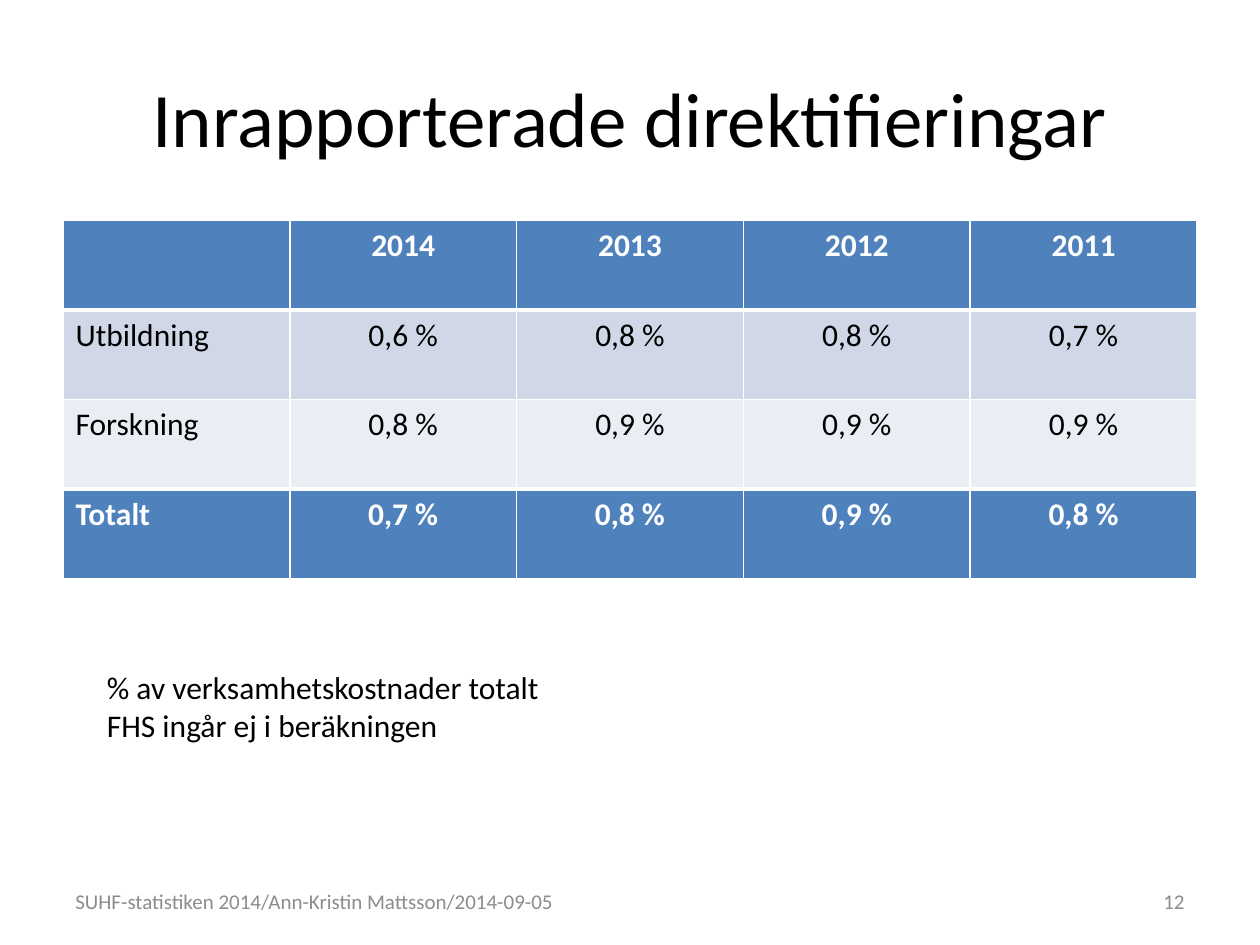
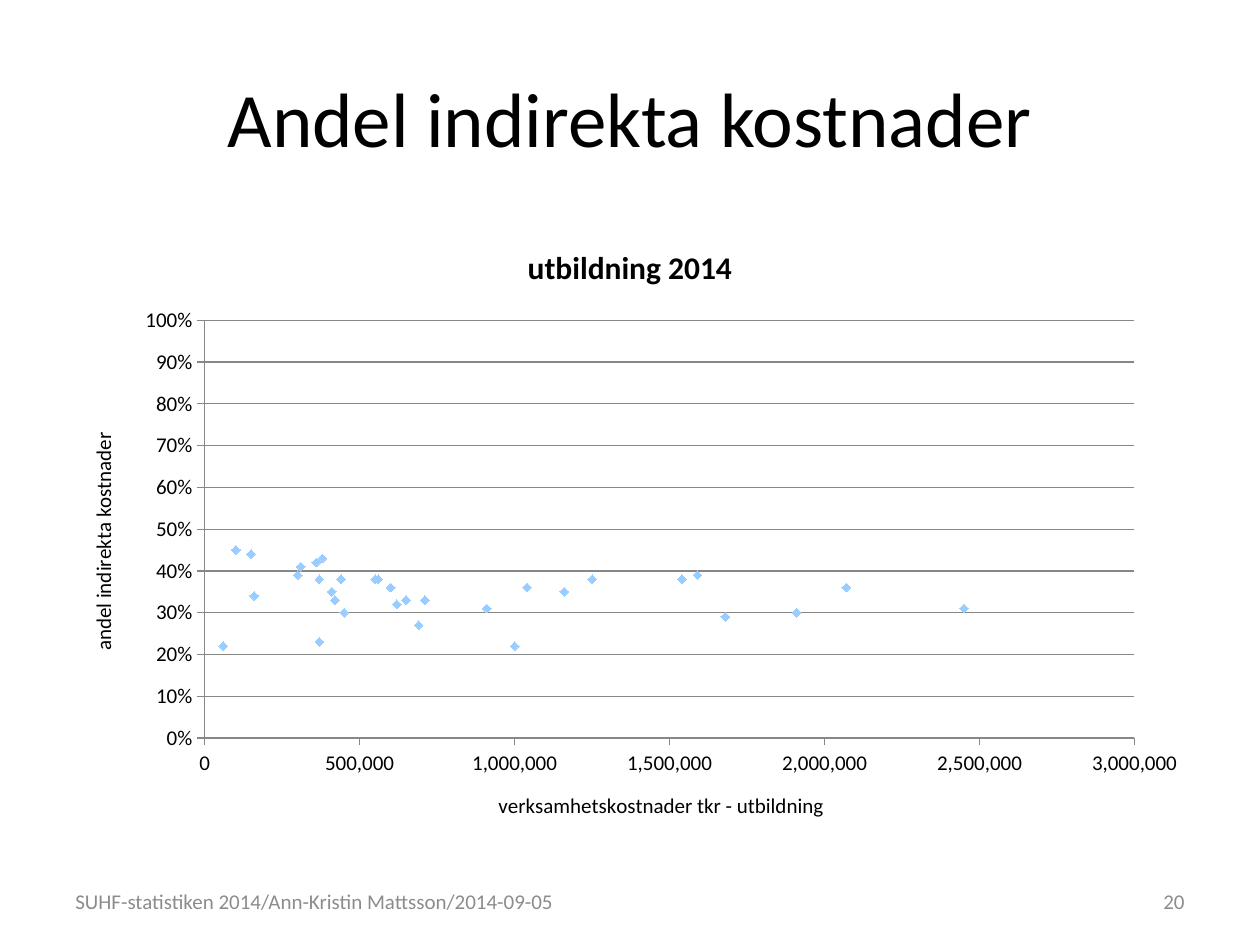
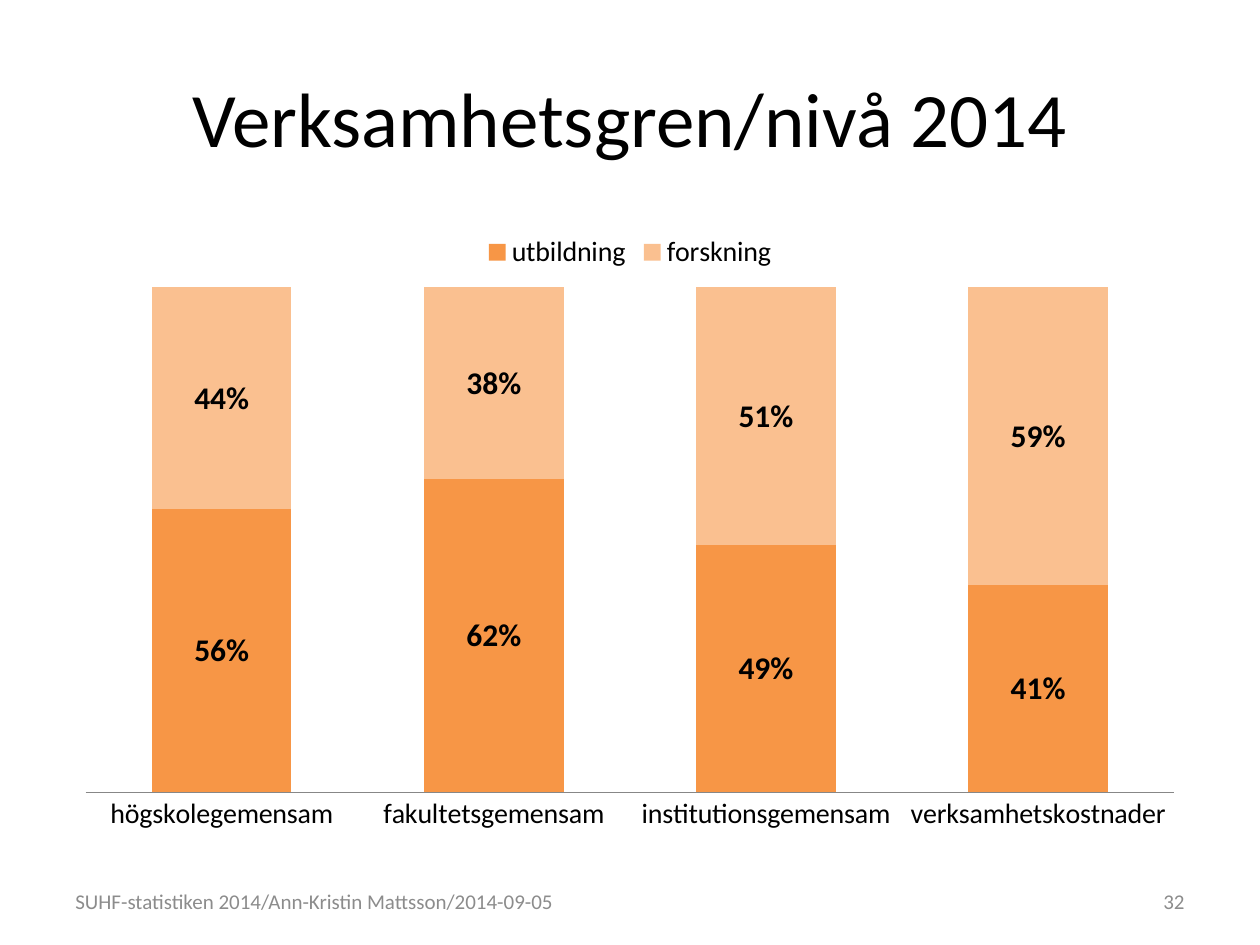
import pptx
import pptx.chart.data
import pptx.dml.color
import pptx.enum.chart
import pptx.enum.text
import pptx.oxml
import pptx.oxml.ns
import pptx.util
from pptx.util import Inches, Pt

FONT = "Calibri"
BLACK, WHITE, GREY, AXIS = "000000", "FFFFFF", "8C8C8C", "878787"
BLUE, BAND_DARK, BAND_LIGHT = "4F81BD", "D0D8E8", "E9EDF4"
MARKER, ORANGE, PEACH = "99CCFF", "F79646", "FAC090"
CONTENT = (0.5, 1.75, 9, 4.95)
FOOTER = "SUHF-statistiken 2014/Ann-Kristin Mattsson/2014-09-05"
ALIGN = pptx.enum.text.PP_ALIGN
ANCHOR = pptx.enum.text.MSO_ANCHOR
CHART = pptx.enum.chart

DIRECT_COSTS = [
    ["", "2014", "2013", "2012", "2011"],
    ["Utbildning", "0,6 %", "0,8 %", "0,8 %", "0,7 %"],
    ["Forskning", "0,8 %", "0,9 %", "0,9 %", "0,9 %"],
    ["Totalt", "0,7 %", "0,8 %", "0,9 %", "0,8 %"],
]

# Education costs in thousands of tkr, and the indirect share in percent
INDIRECT_SHARES = [
    (300, 39), (910, 31), (370, 23), (100, 45), (2070, 36), (440, 38), (420, 33), (380, 43),
    (450, 30), (560, 38), (410, 35), (310, 41), (360, 42), (650, 33), (160, 34), (1000, 22),
    (60, 22), (150, 44), (1250, 38), (1540, 38), (1160, 35), (690, 27), (2450, 31), (1040, 36),
    (600, 36), (550, 38), (370, 38), (620, 32), (1590, 39), (1680, 29), (1910, 30), (710, 33),
]

LEVELS = ["högskolegemensam", "fakultetsgemensam", "institutionsgemensam", "verksamhetskostnader"]
LEVEL_SHARES = [
    ("utbildning", [0.56, 0.62, 0.49, 0.41], ORANGE),
    ("forskning", [0.44, 0.38, 0.51, 0.59], PEACH),
]


def rgb(color):
    return pptx.dml.color.RGBColor.from_string(color)


def style_font(font, size, color=BLACK, bold=False):
    font.name = FONT
    font.size = Pt(size)
    font.bold = bold
    font.color.rgb = rgb(color)


def style_text(frame, size, color=BLACK, bold=False, align=ALIGN.LEFT):
    for paragraph in frame.paragraphs:
        paragraph.alignment = align
        for run in paragraph.runs:
            style_font(run.font, size, color, bold)


def add_text(slide, box, text, size, color=BLACK, align=ALIGN.LEFT, anchor=ANCHOR.TOP):
    frame = slide.shapes.add_textbox(*map(Inches, box)).text_frame
    frame.word_wrap = True
    frame.vertical_anchor = anchor
    frame.text = text
    style_text(frame, size, color, align=align)


def add_slide(deck, heading, number):
    """Add a slide with the shared title, footer and page number."""
    slide = deck.slides.add_slide(deck.slide_layouts[5])
    title = slide.shapes.title
    title.left, title.top, title.width, title.height = map(Inches, (0.5, 0.3, 9, 1.25))
    title.text_frame.text = heading
    title.text_frame.vertical_anchor = ANCHOR.MIDDLE
    style_text(title.text_frame, 44, align=ALIGN.CENTER)
    add_text(slide, (0.5, 6.95, 4.2, 0.4), FOOTER, 12, GREY, anchor=ANCHOR.MIDDLE)
    add_text(slide, (7.17, 6.95, 2.33, 0.4), str(number), 12, GREY, ALIGN.RIGHT, ANCHOR.MIDDLE)
    return slide


def set_borders(cell, top, bottom):
    for side, width in (("L", 1), ("R", 1), ("T", top), ("B", bottom)):
        cell._tc.get_or_add_tcPr().append(pptx.oxml.parse_xml(
            f'<a:ln{side} {pptx.oxml.ns.nsdecls("a")} w="{Pt(width)}"><a:solidFill>'
            f'<a:srgbClr val="{WHITE}"/></a:solidFill></a:ln{side}>'))


def add_cost_table(slide, rows):
    """Draw a table whose first and last rows are emphasised."""
    left, top, width, _ = CONTENT
    last = len(rows) - 1
    table = slide.shapes.add_table(len(rows), len(rows[0]), *map(
        Inches, (left, top, width, 0.71 * len(rows)))).table
    for r, row in enumerate(rows):
        strong = r in (0, last)
        fill = BLUE if strong else (BAND_DARK if r % 2 else BAND_LIGHT)
        for c, text in enumerate(row):
            cell = table.cell(r, c)
            set_borders(cell, 3 if r in (1, last) else 1, 3 if r in (0, last - 1) else 1)
            cell.fill.solid()
            cell.fill.fore_color.rgb = rgb(fill)
            cell.text_frame.text = text
            style_text(cell.text_frame, 18, WHITE if strong else BLACK, strong,
                       ALIGN.CENTER if c else ALIGN.LEFT)


def add_chart(slide, kind, data, plot_area):
    """Add a chart with its inner plot area at fractions x, y, w, h of the frame."""
    chart = slide.shapes.add_chart(kind, *map(Inches, CONTENT), data).chart
    style_font(chart.font, 10)
    chart.plots[0].vary_by_categories = False
    area = chart._chartSpace.chart.plotArea
    for old in area.findall(pptx.oxml.ns.qn("c:layout")):
        area.remove(old)
    places = "".join(f'<c:{key} val="{value}"/>' for key, value in zip("xywh", plot_area))
    area.insert(0, pptx.oxml.parse_xml(
        f'<c:layout {pptx.oxml.ns.nsdecls("c")}><c:manualLayout><c:layoutTarget val="inner"/>'
        f'<c:xMode val="edge"/><c:yMode val="edge"/>{places}</c:manualLayout></c:layout>'))
    return chart


def style_line(line):
    line.color.rgb = rgb(AXIS)
    line.width = Pt(0.75)


def style_axis(axis, size, tick, title=None):
    axis.major_tick_mark = tick
    axis.minor_tick_mark = CHART.XL_TICK_MARK.NONE
    axis.has_major_gridlines = False
    style_line(axis.format.line)
    style_font(axis.tick_labels.font, size)
    if title:
        axis.axis_title.text_frame.text = title
        style_text(axis.axis_title.text_frame, size, align=ALIGN.CENTER)


def set_scale(axis, maximum, step, number_format):
    axis.minimum_scale, axis.maximum_scale, axis.major_unit = 0, maximum, step
    axis.tick_labels.number_format = number_format
    axis.tick_labels.number_format_is_linked = False


def add_share_scatter(slide):
    data = pptx.chart.data.XyChartData()
    points = data.add_series("Series 1")
    for cost, share in INDIRECT_SHARES:
        points.add_data_point(cost * 1000, share / 100)
    chart = add_chart(slide, CHART.XL_CHART_TYPE.XY_SCATTER, data, (0.125, 0.16, 0.82, 0.67))
    chart.has_legend = False
    chart.chart_title.text_frame.text = "utbildning 2014"
    style_text(chart.chart_title.text_frame, 18, bold=True, align=ALIGN.CENTER)

    outside = CHART.XL_TICK_MARK.OUTSIDE
    costs, shares = chart.category_axis, chart.value_axis
    style_axis(costs, 12, outside, "verksamhetskostnader tkr - utbildning")
    style_axis(shares, 12, outside, "andel indirekta kostnader")
    set_scale(costs, 3000000, 500000, "#,##0")
    set_scale(shares, 1, 0.1, "0%")
    shares.has_major_gridlines = True
    style_line(shares.major_gridlines.format.line)

    series = chart.plots[0].series[0]
    series.format.line.fill.background()
    marker = series.marker
    marker.style = CHART.XL_MARKER_STYLE.DIAMOND
    marker.size = 5
    marker.format.fill.solid()
    marker.format.fill.fore_color.rgb = rgb(MARKER)
    marker.format.line.color.rgb = rgb(MARKER)


def add_level_columns(slide):
    data = pptx.chart.data.CategoryChartData(number_format="0%")
    data.categories = LEVELS
    for name, shares, _ in LEVEL_SHARES:
        data.add_series(name, shares)
    chart = add_chart(slide, CHART.XL_CHART_TYPE.COLUMN_STACKED_100, data,
                      (0.02, 0.107, 0.96, 0.81))
    chart.has_title = False
    chart.has_legend = True
    chart.legend.position = CHART.XL_LEGEND_POSITION.TOP
    chart.legend.include_in_layout = False
    style_font(chart.legend.font, 16)
    style_axis(chart.category_axis, 16, CHART.XL_TICK_MARK.NONE)
    chart.value_axis.has_major_gridlines = False
    chart.value_axis.visible = False
    set_scale(chart.value_axis, 1, 0.1, "0%")

    plot = chart.plots[0]
    plot.gap_width, plot.overlap = 95, 100
    for series, (_, _, color) in zip(plot.series, LEVEL_SHARES):
        series.format.fill.solid()
        series.format.fill.fore_color.rgb = rgb(color)
        labels = series.data_labels
        labels.show_value = True
        labels.number_format = "0%"
        labels.number_format_is_linked = False
        style_font(labels.font, 18, bold=True)


def main():
    deck = pptx.Presentation()
    deck.slide_width, deck.slide_height = Inches(10), Inches(7.5)

    direct = add_slide(deck, "Inrapporterade direktifieringar", 12)
    add_cost_table(direct, DIRECT_COSTS)
    add_text(direct, (0.75, 5.25, 4.41, 0.71),
             "% av verksamhetskostnader totalt\nFHS ingår ej i beräkningen", 18)

    add_share_scatter(add_slide(deck, "Andel indirekta kostnader", 20))
    add_level_columns(add_slide(deck, "Verksamhetsgren/nivå 2014", 32))
    deck.save("out.pptx")


if __name__ == "__main__":
    main()
